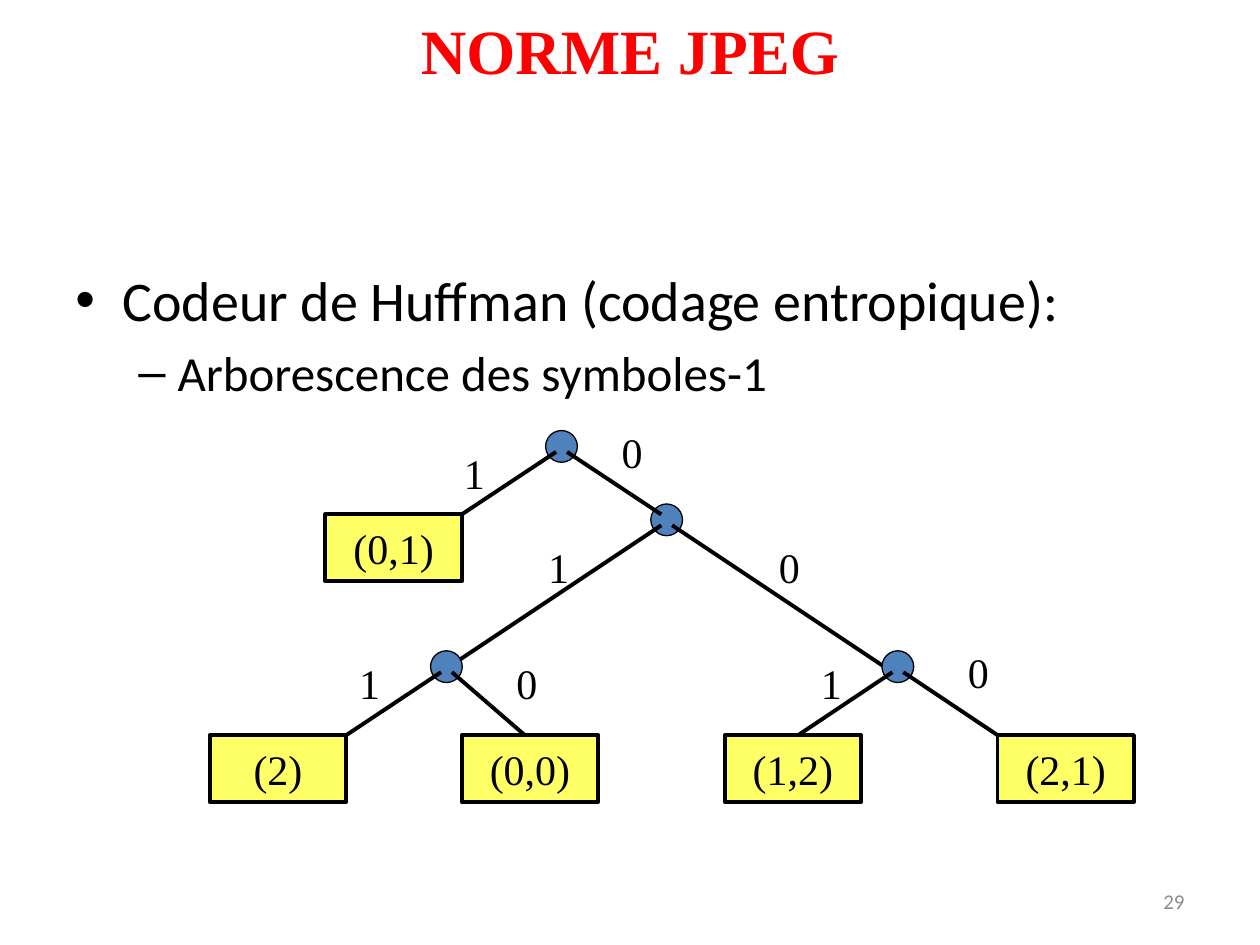
import pptx
import pptx.util
import pptx.dml.color
import pptx.enum.shapes
import pptx.enum.text
import pptx.oxml.ns
import lxml.etree

Cm, Pt = pptx.util.Cm, pptx.util.Pt
Align = pptx.enum.text.PP_ALIGN
Anchor = pptx.enum.text.MSO_ANCHOR
Shape = pptx.enum.shapes.MSO_SHAPE

TITLE = "NORME JPEG"
BULLETS = [
    {"text": "Codeur de Huffman (codage entropique):", "mark": "•", "size": "body",
     "left": 0.95, "hang": 0.95, "before": 0},
    {"text": "Arborescence des symboles-1", "mark": "–", "size": "sub",
     "left": 2.06, "hang": 0.79, "before": 5.6},
]
PAGE_NUMBER = "29"

NODES = {"root": (11.32, 9), "middle": (13.44, 10.48),
         "left": (9, 13.44), "right": (18.1, 13.44)}
LEAVES = {
    "(0,1)": (6.56, 10.37),
    "(2)": (4.23, 14.82),
    "(0,0)": (9.31, 14.82),
    "(1,2)": (14.61, 14.82),
    "(2,1)": (20.11, 14.82),
}
INNER_BRANCHES = [("middle", -1, "left"), ("middle", 1, "right")]
ROOT_BRANCH = ("root", 1, "middle")
LEAF_BRANCHES = [
    ("root", -1, "(0,1)", 2.75),
    ("left", -1, "(2)", 2.75),
    ("left", 1, "(0,0)", 1.27),
    ("right", -1, "(1,2)", 1.48),
    ("right", 1, "(2,1)", 0),
]
BITS = {
    "0": [(10.16, 13.12), (19.26, 12.91), (15.45, 10.8), (12.28, 8.47)],
    "1": [(16.3, 13.12), (10.8, 10.8), (6.99, 13.12), (9.1, 8.89)],
}

DIAMETER, JOINT = 0.64, 0.11
LEAF_SIZE = (2.75, 1.35)
BIT_SIZE = (0.94, 1.27)

THEME = {
    "sans": "Calibri", "serif": "Times New Roman",
    "ink": "000000", "title": "FF0000", "muted": "8C8C8C",
    "node": "4F81BD", "leaf": "FFFF66",
    "sizes": {"title": 36, "body": 32, "sub": 28, "tree": 24, "number": 12},
    "thin": 0.75, "thick": 2.25,
}


def color(name):
    return pptx.dml.color.RGBColor.from_string(THEME[name])


def write(para, text, size="tree", font="serif", ink="ink", bold=False,
          align=Align.LEFT, before=0):
    para.alignment = align
    para.space_before = Pt(before)
    span = para.add_run()
    span.text = text
    span.font.name = THEME[font]
    span.font.size = Pt(THEME["sizes"][size])
    span.font.bold = bold
    span.font.color.rgb = color(ink)


def add_text(page, area, wrap=True, anchor=Anchor.TOP):
    frame = page.shapes.add_textbox(*map(Cm, area)).text_frame
    frame.word_wrap = wrap
    frame.vertical_anchor = anchor
    return frame


def add_bullet(para, item):
    write(para, item["text"], size=item["size"], font="sans", before=item["before"])
    props = para._p.get_or_add_pPr()
    props.set("marL", str(Cm(item["left"])))
    props.set("indent", str(-Cm(item["hang"])))
    qn = pptx.oxml.ns.qn
    lxml.etree.SubElement(props, qn("a:buFont")).set("typeface", "Arial")
    lxml.etree.SubElement(props, qn("a:buChar")).set("char", item["mark"])


def add_box(page, kind, area, fill, width):
    box = page.shapes.add_shape(kind, *map(Cm, area))
    box.shadow.inherit = False
    box.fill.solid()
    box.fill.fore_color.rgb = color(fill)
    box.line.color.rgb = color("ink")
    box.line.width = Pt(THEME[width])
    return box


def add_node(page, name):
    x, y = NODES[name]
    area = (x - DIAMETER / 2, y - DIAMETER / 2, DIAMETER, DIAMETER)
    add_box(page, Shape.OVAL, area, "node", "thin")


def add_branch(page, parent, side, end):
    x, y = NODES[parent]
    start = (x + side * JOINT, y + JOINT)
    line = page.shapes.add_connector(
        pptx.enum.shapes.MSO_CONNECTOR.STRAIGHT, *map(Cm, start + end))
    line.line.color.rgb = color("ink")
    line.line.width = Pt(THEME["thick"])
    lxml.etree.SubElement(line._element.spPr, pptx.oxml.ns.qn("a:effectLst"))


def add_tree(page):
    for name in ("root", "middle"):
        add_node(page, name)
    parent, side, child = ROOT_BRANCH
    x, y = NODES[child]
    add_branch(page, parent, side, (x - JOINT, y - JOINT))
    for parent, side, child in INNER_BRANCHES:
        x, y = NODES[child]
        add_branch(page, parent, side, (x - JOINT, y + JOINT))
        add_node(page, child)
    for parent, side, leaf, offset in LEAF_BRANCHES:
        x, y = LEAVES[leaf]
        add_branch(page, parent, side, (x + offset, y))
    for text, corner in LEAVES.items():
        box = add_box(page, Shape.RECTANGLE, corner + LEAF_SIZE, "leaf", "thick")
        box.text_frame.vertical_anchor = Anchor.MIDDLE
        write(box.text_frame.paragraphs[0], text, align=Align.CENTER)
    for bit, corners in BITS.items():
        for corner in corners:
            frame = add_text(page, corner + BIT_SIZE, wrap=False)
            write(frame.paragraphs[0], bit)


def main():
    deck = pptx.Presentation()
    deck.slide_width, deck.slide_height = Cm(25.4), Cm(19.05)
    page = deck.slides.add_slide(deck.slide_layouts[6])

    body = add_text(page, (1.27, 5.23, 23.29, 11.58))
    for index, item in enumerate(BULLETS):
        para = body.add_paragraph() if index else body.paragraphs[0]
        add_bullet(para, item)

    number = add_text(page, (18.21, 17.65, 5.92, 1.02), anchor=Anchor.MIDDLE)
    write(number.paragraphs[0], PAGE_NUMBER, size="number", font="sans",
          ink="muted", align=Align.RIGHT)

    add_tree(page)

    title = add_text(page, (0, 0, 25.4, 1.98), anchor=Anchor.MIDDLE)
    write(title.paragraphs[0], TITLE, size="title", ink="title", bold=True,
          align=Align.CENTER)
    deck.save("out.pptx")


if __name__ == "__main__":
    main()
